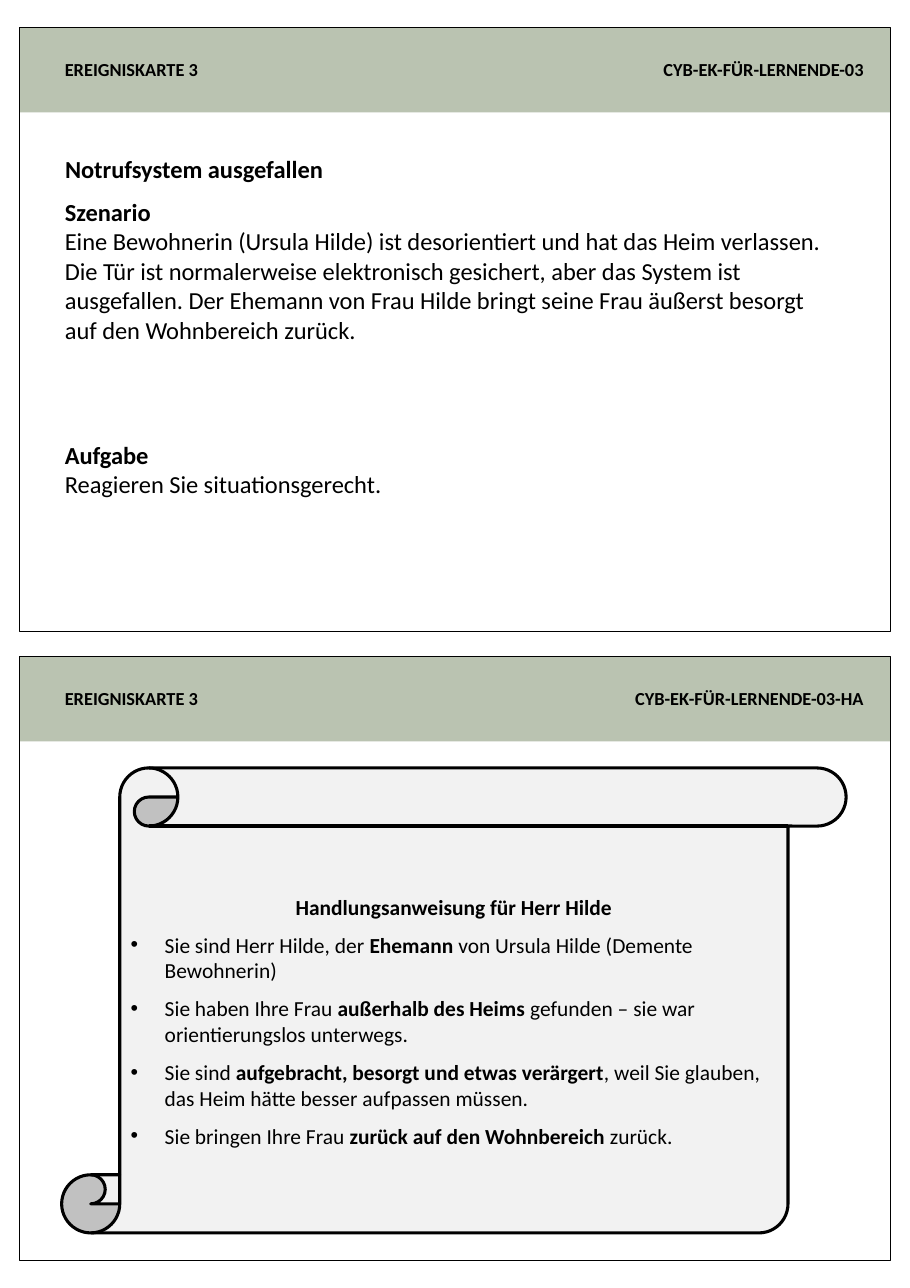
import pptx
import pptx.util
import pptx.dml.color
import pptx.enum.shapes
import pptx.enum.text
from lxml import etree
from pptx.util import Inches

SAGE = pptx.dml.color.RGBColor(0xBA, 0xC3, 0xB1)
PAPER = pptx.dml.color.RGBColor(0xF2, 0xF2, 0xF2)
BLACK = pptx.dml.color.RGBColor(0, 0, 0)
SHAPE = pptx.enum.shapes.MSO_SHAPE
ALIGN = pptx.enum.text.PP_ALIGN
ANCHOR = pptx.enum.text.MSO_ANCHOR
FONT = "Calibri"

LEFT = 0.49
CODES = [("CYB-EK-FÜR-LERNENDE-03", 0.25), ("CYB-EK-FÜR-LERNENDE-03-HA", 5.96)]
SCENE = ("Eine Bewohnerin (Ursula Hilde) ist desorientiert und hat das Heim verlassen. "
         "Die Tür ist normalerweise elektronisch gesichert, aber das System ist ausgefallen. "
         "Der Ehemann von Frau Hilde bringt seine Frau äußerst besorgt auf den Wohnbereich zurück.")
# Each bullet: plain, bold, plain
ROLES = [
    ("Sie sind Herr Hilde, der ", "Ehemann", " von Ursula Hilde (Demente Bewohnerin)"),
    ("Sie haben Ihre Frau ", "außerhalb des Heims ",
     "gefunden – sie war orientierungslos unterwegs."),
    ("Sie sind ", "aufgebracht, besorgt und etwas verärgert",
     ", weil Sie glauben, das Heim hätte besser aufpassen müssen."),
    ("Sie bringen Ihre Frau ", "zurück auf den Wohnbereich ", "zurück."),
]


def style(para, size, bold=None, align=ALIGN.LEFT):
    para.alignment = align
    font = para.font
    font.name = FONT
    font.size = pptx.util.Pt(size)
    font.bold = bold
    font.color.rgb = BLACK


def add_form(slide, kind, box, fill=None, line=None):
    form = slide.shapes.add_shape(kind, *map(Inches, box))
    form.shadow.inherit = False
    if fill is None:
        form.fill.background()
    else:
        form.fill.solid()
        form.fill.fore_color.rgb = fill
    if line is None:
        form.line.fill.background()
    else:
        form.line.color.rgb = BLACK
        form.line.width = pptx.util.Pt(line)
    return form


def add_text(slide, box, lines, size, align=ALIGN.LEFT):
    """Text box whose first line is bold."""
    frame = slide.shapes.add_textbox(*map(Inches, box)).text_frame
    frame.word_wrap = True
    for i, line in enumerate(lines):
        para = frame.add_paragraph() if i else frame.paragraphs[0]
        para.text = line
        style(para, size, i == 0, align)


def add_card(slide, code, top):
    add_form(slide, SHAPE.RECTANGLE, (0.18, top, 7.9, 0.77), fill=SAGE)
    add_form(slide, SHAPE.RECTANGLE, (0.18, top, 7.9, 5.48), line=0.75)
    add_text(slide, (LEFT, top + 0.23, 3, 0.3), ["EREIGNISKARTE 3"], 12)
    add_text(slide, (3.88, top + 0.23, 4.06, 0.3), [code], 12, ALIGN.RIGHT)


def set_title(slide, text):
    title = slide.shapes.title
    title.left, title.top = Inches(LEFT), Inches(1.35)
    title.width, title.height = Inches(6.95), Inches(0.37)
    frame = title.text_frame
    frame.text = text
    frame.auto_size = pptx.enum.text.MSO_AUTO_SIZE.NONE
    frame.vertical_anchor = ANCHOR.TOP
    style(frame.paragraphs[0], 16, True)


def add_bullet(para):
    props = para._p.get_or_add_pPr()
    props.set("marL", str(Inches(0.31)))
    props.set("indent", str(-Inches(0.31)))
    space = pptx.oxml.ns.qn
    etree.SubElement(props, space("a:buFont")).set("typeface", "Arial")
    etree.SubElement(props, space("a:buChar")).set("char", "•")


def add_scroll(slide, head, roles):
    scroll = add_form(slide, SHAPE.VERTICAL_SCROLL, (0.56, 6.97, 7.12, 4.22), PAPER, 2)
    frame = scroll.text_frame
    frame.word_wrap = True
    frame.vertical_anchor = ANCHOR.MIDDLE
    frame.margin_top = Inches(0.16)
    para = frame.paragraphs[0]
    para.text = head
    para.space_after = pptx.util.Pt(8)
    style(para, 14, True, ALIGN.CENTER)
    for role in roles:
        para = frame.add_paragraph()
        para.space_after = pptx.util.Pt(8)
        add_bullet(para)
        style(para, 14)
        for i, part in enumerate(role):
            run = para.add_run()
            run.text = part
            run.font.bold = i == 1


def main():
    deck = pptx.Presentation()
    deck.slide_width, deck.slide_height = Inches(8.26), Inches(11.69)
    slide = deck.slides.add_slide(deck.slide_layouts[5])

    # Card frames and headers
    for code, top in CODES:
        add_card(slide, code, top)

    # Upper card: event and task
    set_title(slide, "Notrufsystem ausgefallen")
    add_text(slide, (LEFT, 1.74, 7.25, 1.45), ["Szenario", SCENE], 16)
    add_text(slide, (LEFT, 3.94, 6.95, 0.91),
             ["Aufgabe", "Reagieren Sie situationsgerecht."], 16)

    # Lower card: role instructions
    add_scroll(slide, "Handlungsanweisung für Herr Hilde", ROLES)
    deck.save("out.pptx")


if __name__ == "__main__":
    main()
